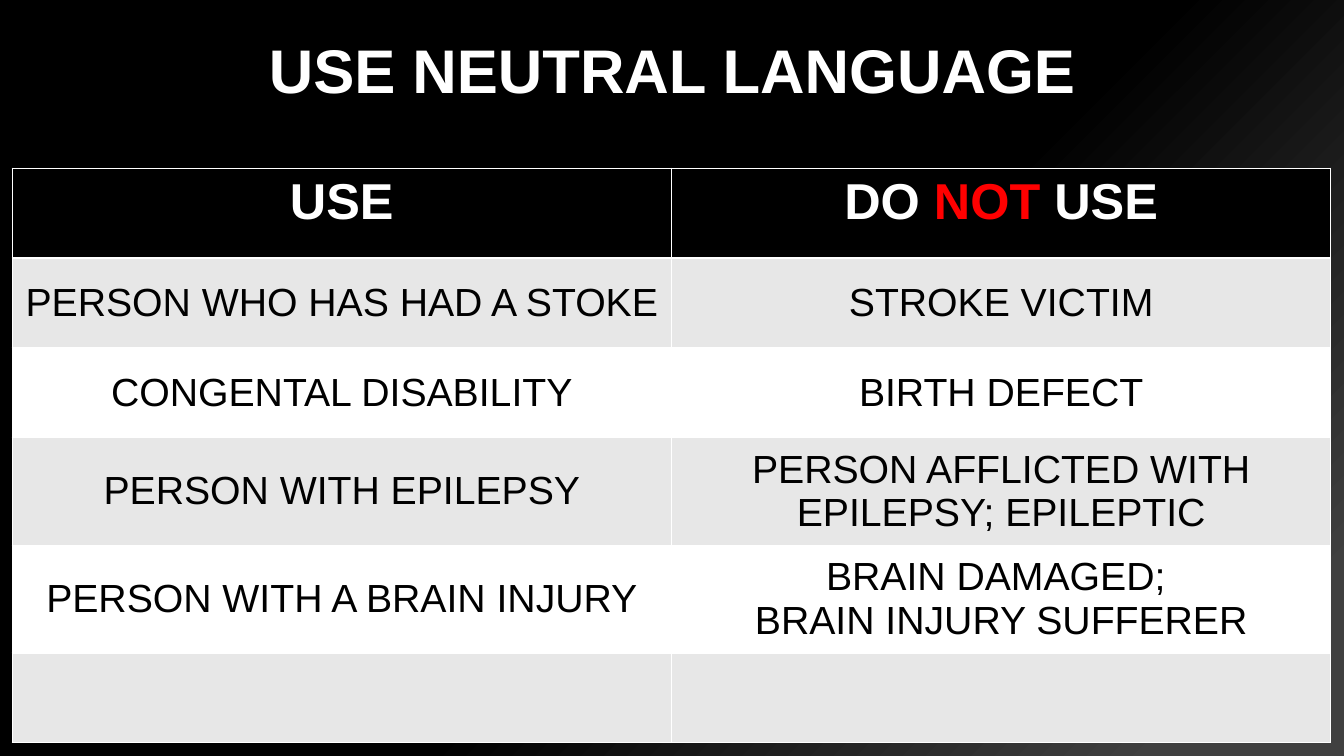
from lxml import etree
from pptx import Presentation
from pptx.dml.color import RGBColor
from pptx.enum.text import MSO_ANCHOR, PP_ALIGN
from pptx.oxml.ns import qn
from pptx.util import Inches, Pt

CENTER = PP_ALIGN.CENTER
TOP, MIDDLE = MSO_ANCHOR.TOP, MSO_ANCHOR.MIDDLE

SLIDE_W, SLIDE_H = 13.33, 7.5
FONT = "Arial"
COLORS = {
    "black": "000000",
    "charcoal": "404040",
    "white": "FFFFFF",
    "band": "E7E7E7",
    "warning": "FF0000",
}

TITLE = "USE NEUTRAL LANGUAGE"
HEADINGS = [["USE"], ["DO ", "NOT", " USE"]]
WORDINGS = [
    ("PERSON WHO HAS HAD A STOKE", "STROKE VICTIM"),
    ("CONGENTAL DISABILITY", "BIRTH DEFECT"),
    ("PERSON WITH EPILEPSY", "PERSON AFFLICTED WITH EPILEPSY; EPILEPTIC"),
    ("PERSON WITH A BRAIN INJURY", "BRAIN DAMAGED; \vBRAIN INJURY SUFFERER"),
    ("", ""),
]
ROW_HEIGHT, TALL_ROW_HEIGHT = 0.89, 1.07
TALL_ROWS = (3, 4)


def rgb(name):
    return RGBColor.from_string(COLORS[name])


def style_runs(paragraph, size, color, bold):
    paragraph.alignment = CENTER
    for run in paragraph.runs:
        font = run.font
        font.name, font.size, font.bold = FONT, Pt(size), bold
        font.color.rgb = rgb(color)


def paint_background(slide):
    fill = slide.background.fill
    fill.gradient()
    fill.gradient_angle = 315
    stops = ((0.56, "black"), (0.91, "charcoal"))
    for stop, (position, color) in zip(fill.gradient_stops, stops):
        stop.position = position
        stop.color.rgb = rgb(color)


def add_title(slide, left, top, width, height):
    title = slide.shapes.add_textbox(*map(Inches, (left, top, width, height)))
    frame = title.text_frame
    frame.word_wrap = True
    frame.vertical_anchor = MIDDLE
    frame.text = TITLE
    frame.paragraphs[0].line_spacing = 0.9
    style_runs(frame.paragraphs[0], 44, "white", True)


def set_cell(cell, fill, anchor):
    """Fill, anchor and frame a cell with thin white borders."""
    cell.vertical_anchor = anchor
    properties = cell._tc.get_or_add_tcPr()
    for side in ("a:lnL", "a:lnR", "a:lnT", "a:lnB"):
        border = etree.SubElement(properties, qn(side), w=str(Pt(1)))
        solid = etree.SubElement(border, qn("a:solidFill"))
        etree.SubElement(solid, qn("a:srgbClr"), val=COLORS["white"])
    cell.fill.solid()
    cell.fill.fore_color.rgb = rgb(fill)


def fill_heading(cell, parts):
    set_cell(cell, "black", TOP)
    paragraph = cell.text_frame.paragraphs[0]
    for part in parts:
        paragraph.add_run().text = part
    style_runs(paragraph, 36, "white", True)
    for run in paragraph.runs:
        if run.text == "NOT":
            run.font.color.rgb = rgb("warning")


def fill_wording(cell, wording, fill):
    set_cell(cell, fill, MIDDLE)
    paragraph = cell.text_frame.paragraphs[0]
    paragraph.text = wording
    style_runs(paragraph, 28, "black", False)


def add_wording_table(slide, left, top, width):
    heights = [TALL_ROW_HEIGHT if row in TALL_ROWS else ROW_HEIGHT
               for row in range(len(WORDINGS) + 1)]
    box = map(Inches, (left, top, width, sum(heights)))
    table = slide.shapes.add_table(len(heights), len(HEADINGS), *box).table
    for row, height in zip(table.rows, heights):
        row.height = Inches(height)
    for column, parts in enumerate(HEADINGS):
        fill_heading(table.cell(0, column), parts)
    for row, pair in enumerate(WORDINGS, start=1):
        for column, wording in enumerate(pair):
            fill_wording(table.cell(row, column), wording,
                         "band" if row % 2 else "white")


def main():
    prs = Presentation()
    prs.slide_width, prs.slide_height = Inches(SLIDE_W), Inches(SLIDE_H)
    slide = prs.slides.add_slide(prs.slide_layouts[6])
    paint_background(slide)
    add_title(slide, 1.01, 0, 11.32, 1.45)
    add_wording_table(slide, 0.12, 1.67, 13.08)
    prs.save("out.pptx")


if __name__ == "__main__":
    main()
